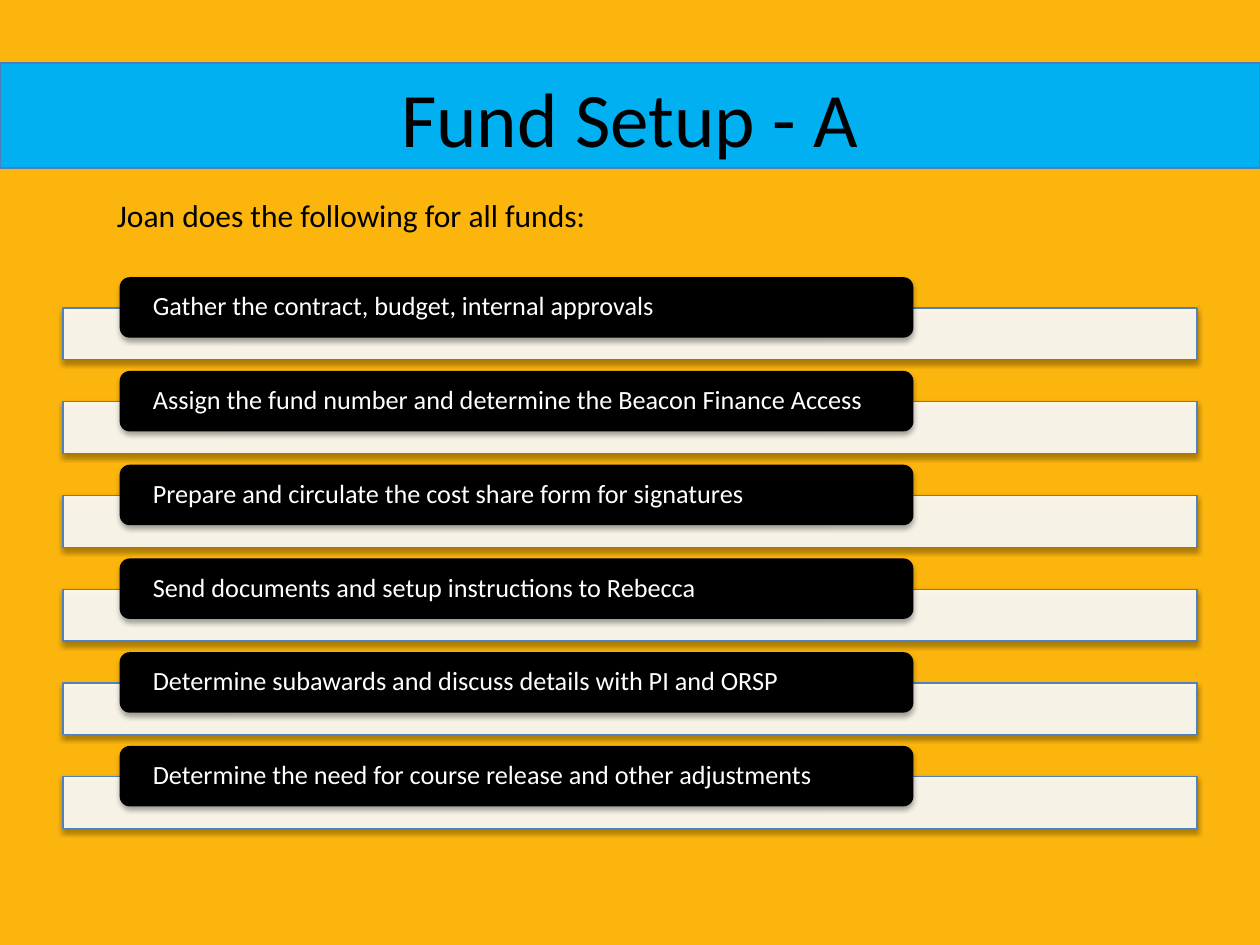
from dataclasses import dataclass

import pptx
import pptx.dml.color
import pptx.enum.shapes
import pptx.enum.text
import pptx.oxml.ns
import pptx.util
from lxml import etree

SHAPES = pptx.enum.shapes.MSO_SHAPE
ALIGN = pptx.enum.text.PP_ALIGN
ANCHOR = pptx.enum.text.MSO_ANCHOR

WIDTH, HEIGHT = 10, 7.5
FIRST_STEP_TOP, STEP_PITCH = 2.2, 0.744
PILL_HEIGHT, BAR_HEIGHT, BAR_DROP = 0.48, 0.41, 0.245

STEPS = [
    "Gather the contract, budget, internal approvals",
    "Assign the fund number and determine the Beacon Finance Access",
    "Prepare and circulate the cost share form for signatures",
    "Send documents and setup instructions to Rebecca",
    "Determine subawards and discuss details with PI and ORSP",
    "Determine the need for course release and other adjustments",
]


@dataclass(frozen=True)
class Theme:
    font: str = "Calibri"
    background: str = "FCB50C"
    banner: str = "00B0F0"
    banner_line: str = "4B7EBC"
    bar: str = "FFFFFF"
    bar_line: str = "4F81BD"
    pill: str = "000000"
    dark_text: str = "000000"
    light_text: str = "FFFFFF"
    title_size: int = 44
    intro_size: int = 18
    step_size: int = 15
    line_width: float = 0.75


THEME = Theme()


def rgb(color):
    return pptx.dml.color.RGBColor.from_string(color)


def inches(*lengths):
    return [pptx.util.Inches(length) for length in lengths]


def add_child(parent, tag, **attributes):
    child = etree.SubElement(parent, pptx.oxml.ns.qn(tag))
    for name, value in attributes.items():
        child.set(name, str(value))
    return child


def add_block(slide, preset, box, fill, line=None):
    block = slide.shapes.add_shape(preset, *inches(*box))
    block.shadow.inherit = False
    block.fill.solid()
    block.fill.fore_color.rgb = rgb(fill)
    if line:
        block.line.color.rgb = rgb(line)
        block.line.width = pptx.util.Pt(THEME.line_width)
    else:
        block.line.fill.background()
    return block


def set_opacity(block, percent):
    color = block.fill._xPr.find(".//" + pptx.oxml.ns.qn("a:srgbClr"))
    add_child(color, "a:alpha", val=percent * 1000)


def cast_shadow(block):
    """Add a soft shadow that falls straight down."""
    effects = block._element.spPr.find(pptx.oxml.ns.qn("a:effectLst"))
    shadow = add_child(
        effects, "a:outerShdw", blurRad=pptx.util.Pt(3.1),
        dist=pptx.util.Pt(1.8), dir=90 * 60000, rotWithShape=0)
    color = add_child(shadow, "a:srgbClr", val="000000")
    add_child(color, "a:alpha", val=35000)


def write(shape, text, size, color, align=ALIGN.LEFT, anchor=ANCHOR.MIDDLE, wrap=True):
    frame = shape.text_frame
    frame.text = text
    frame.word_wrap = wrap
    frame.vertical_anchor = anchor
    paragraph = frame.paragraphs[0]
    paragraph.alignment = align
    font = paragraph.runs[0].font
    font.name = THEME.font
    font.size = pptx.util.Pt(size)
    font.color.rgb = rgb(color)
    return frame


def add_title(slide, text):
    add_block(slide, SHAPES.RECTANGLE, (0, HEIGHT / 15, WIDTH, HEIGHT / 9),
              THEME.banner, THEME.banner_line)
    title = slide.shapes.add_textbox(*inches(WIDTH * 0.05, 0.3, WIDTH * 0.9, 1.25))
    write(title, text, THEME.title_size, THEME.dark_text, ALIGN.CENTER)


def add_intro(slide, text):
    intro = slide.shapes.add_textbox(*inches(0.83, 1.51, 4.03, 0.4))
    frame = write(intro, text, THEME.intro_size, THEME.dark_text,
                  anchor=ANCHOR.TOP, wrap=False)
    frame.auto_size = pptx.enum.text.MSO_AUTO_SIZE.SHAPE_TO_FIT_TEXT


def add_step(slide, row, text):
    top = FIRST_STEP_TOP + row * STEP_PITCH
    bar = add_block(slide, SHAPES.RECTANGLE,
                    (WIDTH * 0.05, top + BAR_DROP, WIDTH * 0.9, BAR_HEIGHT),
                    THEME.bar, THEME.bar_line)
    set_opacity(bar, 90)
    cast_shadow(bar)

    pill = add_block(slide, SHAPES.ROUNDED_RECTANGLE,
                     (WIDTH * 0.095, top, WIDTH * 0.63, PILL_HEIGHT), THEME.pill)
    cast_shadow(pill)
    frame = write(pill, text, THEME.step_size, THEME.light_text)
    # The preset's text area is already inset by its rounded corners.
    frame.margin_left = frame.margin_right = pptx.util.Inches(0.24)
    frame.margin_top = frame.margin_bottom = 0
    frame.paragraphs[0].line_spacing = 0.9


def main():
    deck = pptx.Presentation()
    deck.slide_width, deck.slide_height = inches(WIDTH, HEIGHT)
    slide = deck.slides.add_slide(deck.slide_layouts[6])
    slide.background.fill.solid()
    slide.background.fill.fore_color.rgb = rgb(THEME.background)

    add_title(slide, "Fund Setup - A")
    for row, step in enumerate(STEPS):
        add_step(slide, row, step)
    add_intro(slide, "Joan does the following for all funds:")
    deck.save("out.pptx")


if __name__ == "__main__":
    main()
